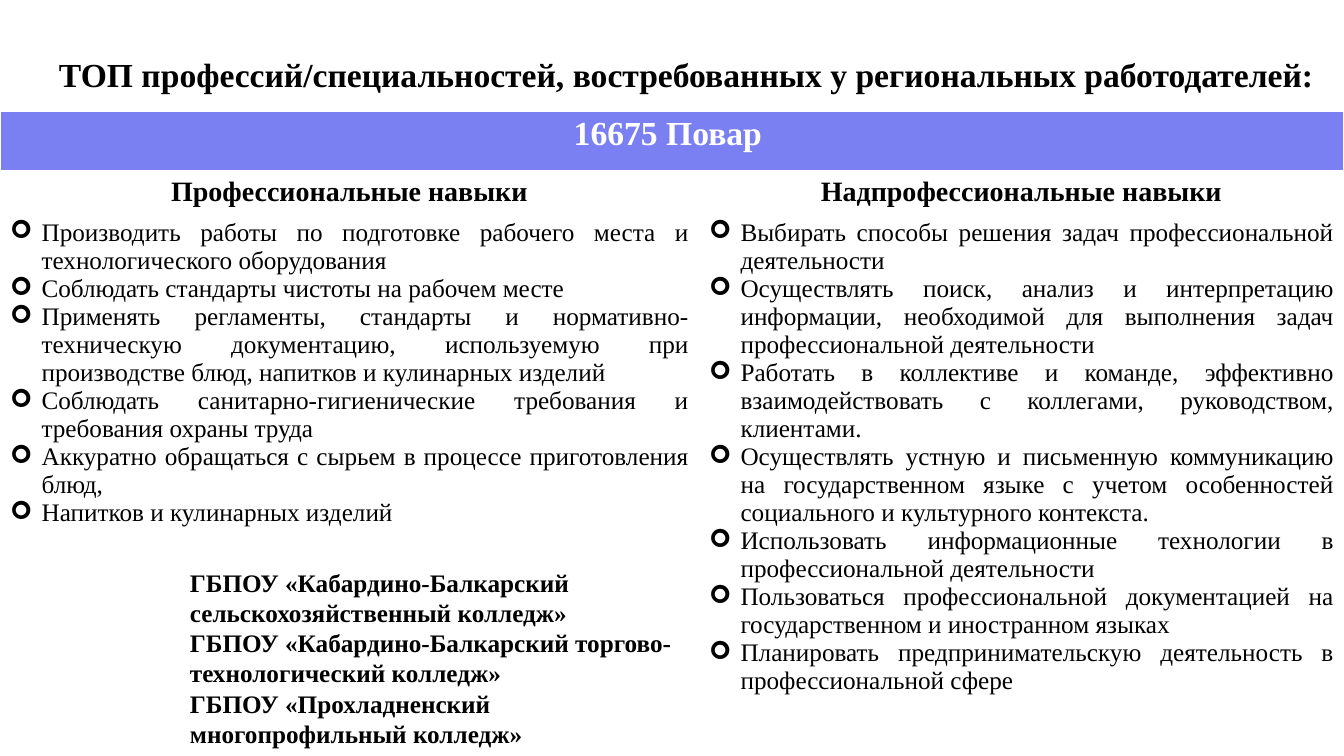
"""Build the slide on in-demand professions: the skills of a cook and the colleges that teach them."""
from lxml import etree
from pptx import Presentation
from pptx.dml.color import RGBColor
from pptx.enum.text import PP_ALIGN
from pptx.oxml.ns import qn
from pptx.util import Emu, Pt

CENTER, JUSTIFY, LEFT = PP_ALIGN.CENTER, PP_ALIGN.JUSTIFY, PP_ALIGN.LEFT
SLIDE_WIDTH, SLIDE_HEIGHT = 1344, 756
PX = 12192000 / SLIDE_WIDTH
BULLET_INDENT = Emu(285750)


def px(length):
    return Emu(round(length * PX))


def write(text_frame, lines, size, color, bold=True, align=LEFT, spacing=None, bullet=None):
    text_frame.word_wrap = True
    text_frame.text = "\n".join(lines)
    for paragraph in text_frame.paragraphs:
        if bullet:
            properties = paragraph._p.get_or_add_pPr()
            properties.set("marL", str(BULLET_INDENT))
            properties.set("indent", str(-BULLET_INDENT))
            etree.SubElement(properties, qn("a:buFont"), typeface="Wingdings")
            etree.SubElement(properties, qn("a:buChar"), char=bullet)
        paragraph.alignment = align
        if spacing:
            paragraph.line_spacing = Pt(spacing)
        for run in paragraph.runs:
            run.font.name = "Times New Roman"
            run.font.size = Pt(size)
            run.font.bold = bold
            run.font.color.rgb = RGBColor.from_string(color)


presentation = Presentation()
presentation.slide_width = px(SLIDE_WIDTH)
presentation.slide_height = px(SLIDE_HEIGHT)
slide = presentation.slides.add_slide(presentation.slide_layouts[6])

title = "ТОП профессий/специальностей, востребованных у региональных работодателей:"
colleges = [
    "ГБПОУ «Кабардино-Балкарский сельскохозяйственный колледж»",
    "ГБПОУ «Кабардино-Балкарский торгово-технологический колледж»",
    "ГБПОУ «Прохладненский\vмногопрофильный колледж»",
]
skills = {
    "Профессиональные навыки": [
        "Производить работы по подготовке рабочего места и технологического оборудования",
        "Соблюдать стандарты чистоты на рабочем месте",
        "Применять регламенты, стандарты и нормативно-техническую документацию, "
        "используемую при производстве блюд, напитков и кулинарных изделий",
        "Соблюдать санитарно-гигиенические требования и требования охраны труда",
        "Аккуратно обращаться с сырьем в процессе приготовления блюд,",
        "Напитков и кулинарных изделий",
    ],
    "Надпрофессиональные навыки": [
        "Выбирать способы решения задач профессиональной деятельности",
        "Осуществлять поиск, анализ и интерпретацию информации, необходимой "
        "для выполнения задач профессиональной деятельности",
        "Работать в коллективе и команде, эффективно взаимодействовать с коллегами, "
        "руководством, клиентами.",
        "Осуществлять устную и письменную коммуникацию на государственном языке "
        "с учетом особенностей социального и культурного контекста.",
        "Использовать информационные технологии в профессиональной деятельности",
        "Пользоваться профессиональной документацией на государственном и иностранном языках",
        "Планировать предпринимательскую деятельность в профессиональной сфере",
    ],
}

column_widths = [699, 645]
row_heights = [60, 43, 525]
table = slide.shapes.add_table(
    3, 2, px(0), px(111), px(sum(column_widths)), px(sum(row_heights))).table
table.first_row = False
table.horz_banding = False
for column, width in zip(table.columns, column_widths):
    column.width = px(width)
for row, height in zip(table.rows, row_heights):
    row.height = px(height)
for cell in table.iter_cells():
    cell.fill.background()

profession = table.cell(0, 0)
profession.merge(table.cell(0, 1))
profession.fill.solid()
profession.fill.fore_color.rgb = RGBColor.from_string("7A80F2")
write(profession.text_frame, ["16675 Повар "], 24, "FFFFFF", align=CENTER)

for column, (heading, items) in enumerate(skills.items()):
    write(table.cell(1, column).text_frame, [heading], 20, "000000", align=CENTER)
    write(table.cell(2, column).text_frame, items, 18, "000000",
          bold=False, align=JUSTIFY, spacing=20, bullet="➢")

for box, lines, size in [
    ((49, 49, 1322, 50), [title], 24),
    ((180, 562, 530, 194), colleges, 18),
]:
    text_box = slide.shapes.add_textbox(*map(px, box))
    write(text_box.text_frame, lines, size, "000000", spacing=size * 1.2)

presentation.save("out.pptx")
